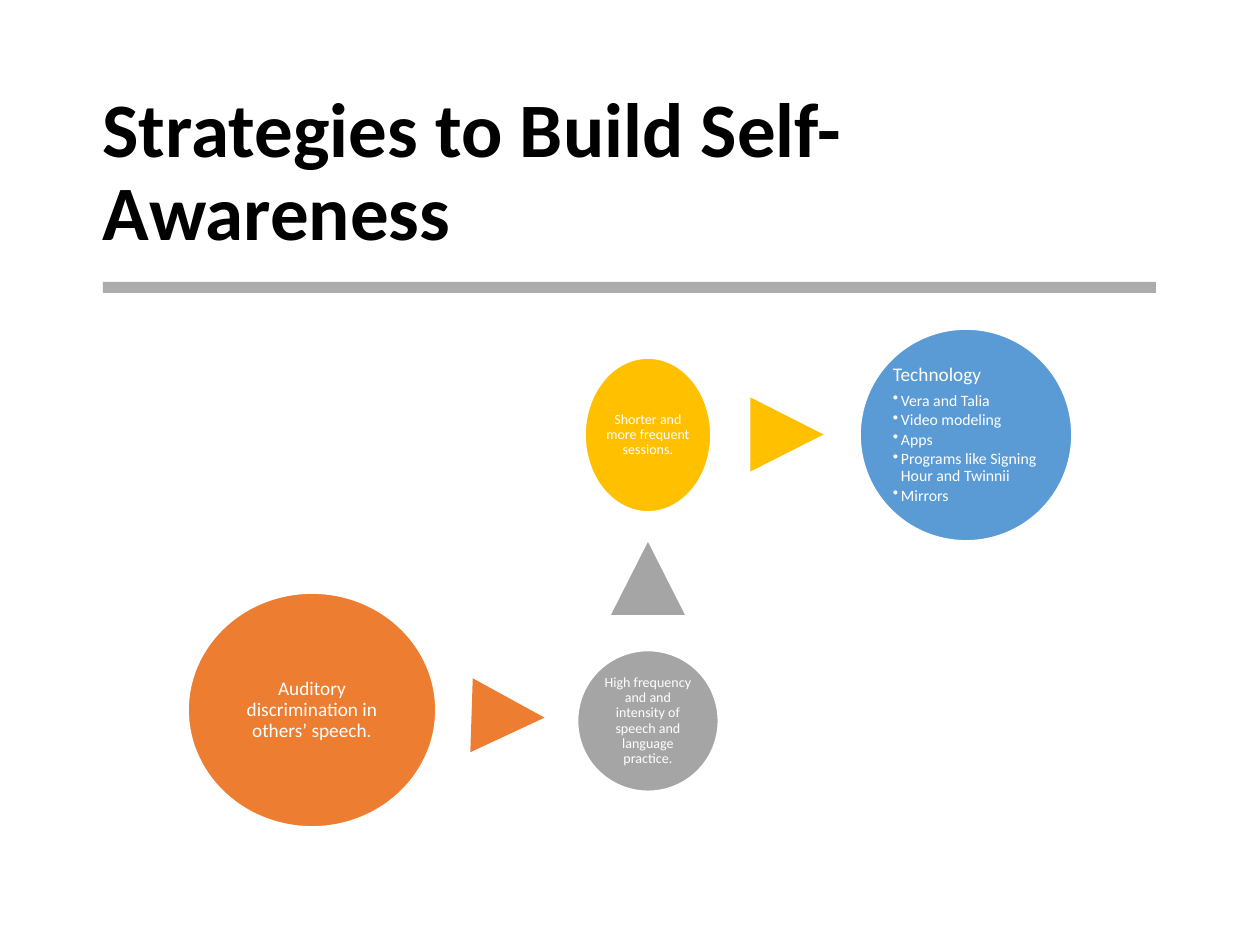
from math import sqrt

from lxml.etree import SubElement
from pptx import Presentation
from pptx.dml.color import RGBColor
from pptx.enum.shapes import MSO_SHAPE
from pptx.enum.text import MSO_ANCHOR, MSO_AUTO_SIZE, PP_ALIGN
from pptx.oxml.ns import qn
from pptx.util import Pt

EMU_PER_PX = 914400 / 126


def px(length):
    return round(length * EMU_PER_PX)


def color(value):
    return RGBColor.from_string(value)


def write(paragraph, text, size, ink="FFFFFF", font="Calibri", bold=False,
          align=PP_ALIGN.LEFT, after=0, bullet=False):
    paragraph.alignment = align
    paragraph.line_spacing = 0.9
    paragraph.space_before = Pt(0)
    paragraph.space_after = Pt(after)
    if bullet:
        paragraph.level = 1
        properties = paragraph._p.get_or_add_pPr()
        properties.set("marL", str(px(8)))
        properties.set("indent", str(-px(8)))
        SubElement(properties, qn("a:buChar"), char="•")
    run = paragraph.add_run()
    run.text = text
    run.font.name = font
    run.font.size = Pt(size)
    run.font.bold = bold
    run.font.color.rgb = color(ink)


class StrategySlide:
    white = "FFFFFF"
    black = "000000"

    def __init__(self, deck):
        self.slide = deck.slides.add_slide(deck.slide_layouts[5])

    def title(self, text, left, top, width, height):
        heading = self.slide.shapes.title
        heading.left, heading.top = px(left), px(top)
        heading.width, heading.height = px(width), px(height)
        frame = heading.text_frame
        frame.word_wrap = True
        frame.auto_size = MSO_AUTO_SIZE.NONE
        frame.vertical_anchor = MSO_ANCHOR.MIDDLE
        write(frame.paragraphs[0], text, 44, ink=self.black, bold=True)

    def shape(self, kind, left, top, width, height, fill, outline=None):
        drawn = self.slide.shapes.add_shape(
            kind, px(left), px(top), px(width), px(height))
        drawn.shadow.inherit = False
        drawn.fill.solid()
        drawn.fill.fore_color.rgb = color(fill)
        if outline:
            drawn.line.color.rgb = color(outline)
            drawn.line.width = Pt(1)
        else:
            drawn.line.fill.background()
        return drawn

    def rule(self, left, top, width, height, fill, opacity):
        bar = self.shape(MSO_SHAPE.RECTANGLE, left, top, width, height, fill)
        tint = bar._element.spPr.find(qn("a:solidFill"))[0]
        SubElement(tint, qn("a:alpha"), val=str(opacity * 1000))

    def pointer(self, center_x, center_y, fill, rotation=0):
        triangle = self.shape(MSO_SHAPE.ISOSCELES_TRIANGLE,
                              center_x - 37, center_y - 37, 74, 73, fill)
        triangle.rotation = rotation

    def circle(self, center_x, center_y, width, height, fill, text, size,
               inset=1, items=()):
        self.shape(MSO_SHAPE.OVAL, center_x - width / 2, center_y - height / 2,
                   width, height, fill, self.white)
        inner_width, inner_height = width / sqrt(2), height / sqrt(2)
        label = self.slide.shapes.add_textbox(
            px(center_x - inner_width / 2), px(center_y - inner_height / 2),
            px(inner_width), px(inner_height))
        frame = label.text_frame
        frame.word_wrap = True
        frame.vertical_anchor = MSO_ANCHOR.MIDDLE
        frame.margin_left = frame.margin_right = px(inset)
        frame.margin_top = frame.margin_bottom = px(inset)
        align = PP_ALIGN.LEFT if items else PP_ALIGN.CENTER
        write(frame.paragraphs[0], text, size, align=align, after=size * 0.35)
        for item in items:
            write(frame.add_paragraph(), item, 9, after=1.35, bullet=True)


def main():
    deck = Presentation()
    deck.slide_width, deck.slide_height = px(1260), px(945)
    page = StrategySlide(deck)
    orange, gray, yellow, blue = "ED7D31", "A5A5A5", "FFC000", "5B9BD5"

    page.title("Strategies to Build Self-Awareness", 90, 83, 1080, 183)
    page.rule(103, 282, 1053, 11, "808080", 65)

    page.circle(312, 710, 248, 234, orange,
                "Auditory discrimination in others’ speech.", 11, inset=2)
    page.pointer(508, 717, orange, 91.9)
    page.circle(648, 721, 141, 141, gray,
                "High frequency and and intensity of speech and language practice.", 8)
    page.pointer(648, 579, gray)
    page.circle(648, 435, 126, 154, yellow,
                "Shorter and more frequent sessions.", 8)
    page.pointer(787, 435, yellow, 90)
    page.circle(966, 435, 212, 212, blue, "Technology", 11, inset=2, items=(
        "Vera and Talia",
        "Video modeling",
        "Apps",
        "Programs like Signing Hour and Twinnii",
        "Mirrors",
    ))

    deck.save("out.pptx")


if __name__ == "__main__":
    main()
